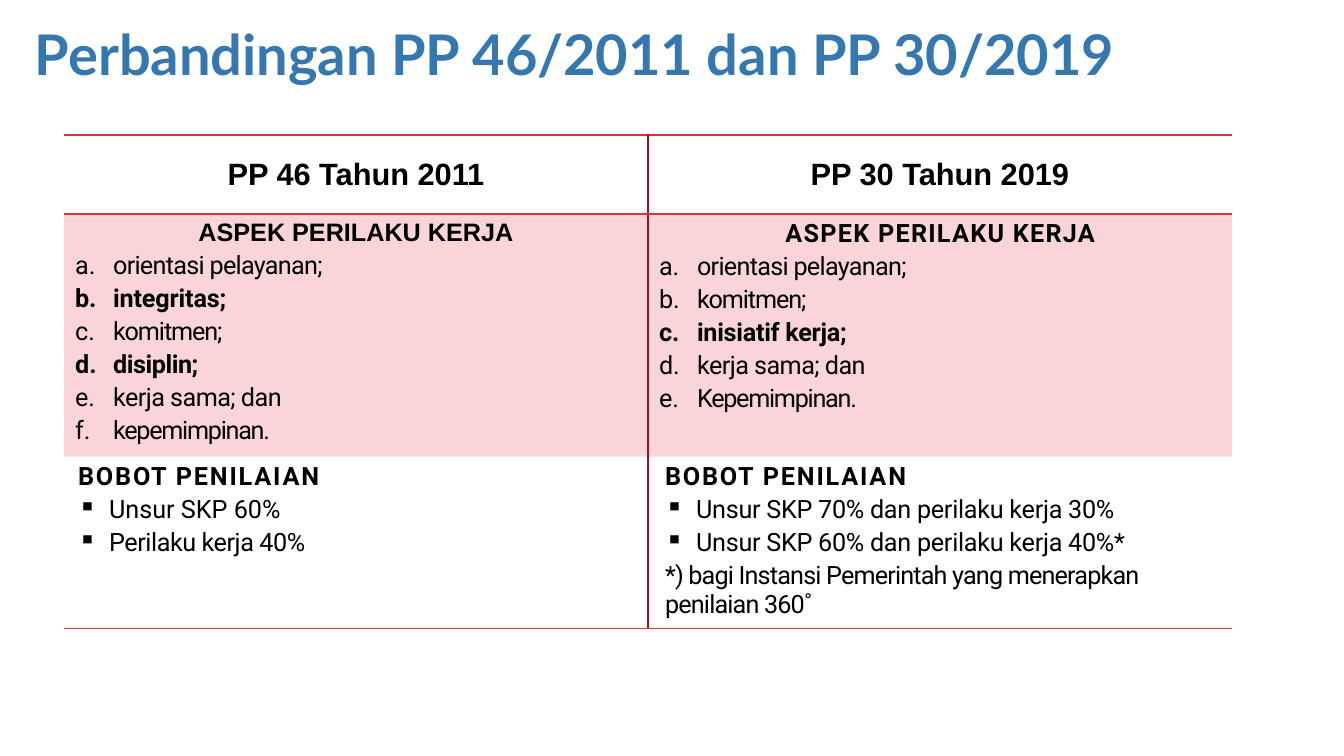
from dataclasses import dataclass
from typing import Optional

from lxml.etree import SubElement
from pptx import Presentation
from pptx.dml.color import RGBColor
from pptx.enum.text import MSO_ANCHOR, PP_ALIGN
from pptx.oxml.ns import qn
from pptx.slide import Slide
from pptx.table import _Cell
from pptx.text.text import TextFrame
from pptx.util import Emu, Pt

EMU_PER_PX = 914400 / 100.8
BLUE = RGBColor(0x35, 0x78, 0xAF)
RED = RGBColor(0xE2, 0x30, 0x42)
DARK_RED = RGBColor(0xA8, 0x0B, 0x22)
BLACK = RGBColor(0x00, 0x00, 0x00)
ROW_HEIGHTS = (79, 237, 168)
COLUMN_WIDTH = 584


@dataclass(frozen=True)
class Line:
    """One paragraph; margin and hanging are in px, spacing is in points."""

    text: str
    spacing: float = 0
    bold: bool = False
    size: int = 18
    font: str = "Roboto"
    color: RGBColor = BLACK
    centered: bool = False
    bullet: str = ""
    margin: int = 0
    hanging: int = 0
    before: float = 2.5
    leading: Optional[float] = None


def px(length: int) -> Emu:
    """Turn px into EMU."""
    return Emu(round(length * EMU_PER_PX))


def header(text: str) -> list[Line]:
    """Give the heading of a column."""
    return [Line(text, bold=True, size=22, font="Arial", centered=True, before=0)]


def lettered(text: str, spacing: float, bold: bool = False) -> Line:
    """Give one item of a lettered list."""
    return Line(text, spacing, bold, bullet="a.", margin=39, hanging=38)


def squared(text: str, spacing: float, margin: int) -> Line:
    """Give one item of a list with square bullets."""
    return Line(text, spacing, bullet="▪", margin=margin, hanging=31)


def weight_title(margin: int) -> Line:
    """Give the heading of the weighting section."""
    return Line("BOBOT PENILAIAN", 1.3, True, margin=margin, before=3.5)


TITLE = Line("Perbandingan PP 46/2011 dan PP 30/2019", bold=True, size=40,
             font="Lato", color=BLUE, before=10, leading=0.9)
COMPARISON = (
    (header("PP 46 Tahun 2011"), header("PP 30 Tahun 2019")),
    (
        [
            Line("ASPEK PERILAKU KERJA", bold=True, font="Arial", centered=True, before=0),
            lettered("orientasi pelayanan;", -0.5),
            lettered("integritas;", -0.1, True),
            lettered("komitmen;", -0.8),
            lettered("disiplin;", -0.3, True),
            lettered("kerja sama; dan", -0.4),
            lettered("kepemimpinan.", -0.9),
        ],
        [
            Line("ASPEK PERILAKU KERJA", 0.9, True, centered=True, margin=1, before=3.5),
            lettered("orientasi pelayanan;", -0.5),
            lettered("komitmen;", -0.8),
            lettered("inisiatif kerja;", -0.2, True),
            lettered("kerja sama; dan", -0.4),
            lettered("Kepemimpinan.", -0.9),
        ],
    ),
    (
        [
            weight_title(4),
            squared("Unsur SKP 60%", 0, 35),
            squared("Perilaku kerja 40%", -0.3, 35),
        ],
        [
            weight_title(7),
            squared("Unsur SKP 70% dan perilaku kerja 30%", -0.2, 38),
            squared("Unsur SKP 60% dan perilaku kerja 40%*", -0.2, 38),
            Line("*) bagi Instansi Pemerintah yang menerapkan penilaian 360˚", -0.6, margin=7),
        ],
    ),
)


def write_lines(frame: TextFrame, lines: list[Line]) -> None:
    """Fill a text frame with paragraphs."""
    for index, line in enumerate(lines):
        paragraph = frame.add_paragraph() if index else frame.paragraphs[0]
        paragraph.alignment = PP_ALIGN.CENTER if line.centered else PP_ALIGN.LEFT
        paragraph.space_before = Pt(line.before)
        if line.leading:
            paragraph.line_spacing = line.leading
        properties = paragraph._p.get_or_add_pPr()
        properties.set("marL", str(px(line.margin)))
        properties.set("indent", str(px(-line.hanging)))
        if line.bullet == "a.":
            SubElement(properties, qn("a:buAutoNum"), type="alphaLcPeriod")
        elif line.bullet:
            SubElement(properties, qn("a:buChar"), char=line.bullet)
        font = paragraph.font
        font.name, font.size, font.bold = line.font, Pt(line.size), line.bold
        font.color.rgb = line.color
        run = paragraph.add_run()
        run.text = line.text
        if line.spacing:
            run._r.get_or_add_rPr().set("spc", str(round(line.spacing * 100)))


def draw_borders(cell: _Cell, colors: dict[str, RGBColor]) -> None:
    """Draw the given sides of a cell and clear the others."""
    properties = cell._tc.get_or_add_tcPr()
    for side in "LRTB":
        border = SubElement(properties, qn(f"a:ln{side}"), w=str(Pt(1)))
        if side in colors:
            fill = SubElement(border, qn("a:solidFill"))
            SubElement(fill, qn("a:srgbClr"), val=str(colors[side]))
        else:
            SubElement(border, qn("a:noFill"))


def tint(cell: _Cell) -> None:
    """Fill a cell with transparent red."""
    cell.fill.solid()
    cell.fill.fore_color.rgb = RED
    color = cell._tc.tcPr.find(f"{qn('a:solidFill')}/{qn('a:srgbClr')}")
    SubElement(color, qn("a:alpha"), val="20000")


def add_title(slide: Slide) -> None:
    """Place the slide title."""
    frame = slide.shapes.add_textbox(px(25), px(22), px(1167), px(72)).text_frame
    frame.word_wrap = True
    write_lines(frame, [TITLE])


def add_comparison(slide: Slide) -> None:
    """Place the table that compares both regulations."""
    comparison = slide.shapes.add_table(
        len(ROW_HEIGHTS), 2, px(64), px(135), px(2 * COLUMN_WIDTH), px(sum(ROW_HEIGHTS))
    ).table
    comparison.first_row = comparison.horz_banding = False
    for column in comparison.columns:
        column.width = px(COLUMN_WIDTH)
    for row, (height, sections) in enumerate(zip(ROW_HEIGHTS, COMPARISON)):
        comparison.rows[row].height = px(height)
        for column, lines in enumerate(sections):
            cell = comparison.cell(row, column)
            borders = {"L" if column else "R": DARK_RED}
            if row < 2:
                borders["T"] = RED
            if row != 1:
                borders["B"] = RED
            draw_borders(cell, borders)
            if row == 1:
                tint(cell)
            else:
                cell.fill.background()
            cell.vertical_anchor = MSO_ANCHOR.TOP if row else MSO_ANCHOR.MIDDLE
            write_lines(cell.text_frame, lines)


def main() -> None:
    """Build and save the slide."""
    presentation = Presentation()
    presentation.slide_width, presentation.slide_height = px(1344), px(756)
    slide = presentation.slides.add_slide(presentation.slide_layouts[6])
    add_title(slide)
    add_comparison(slide)
    presentation.save("out.pptx")


if __name__ == "__main__":
    main()
